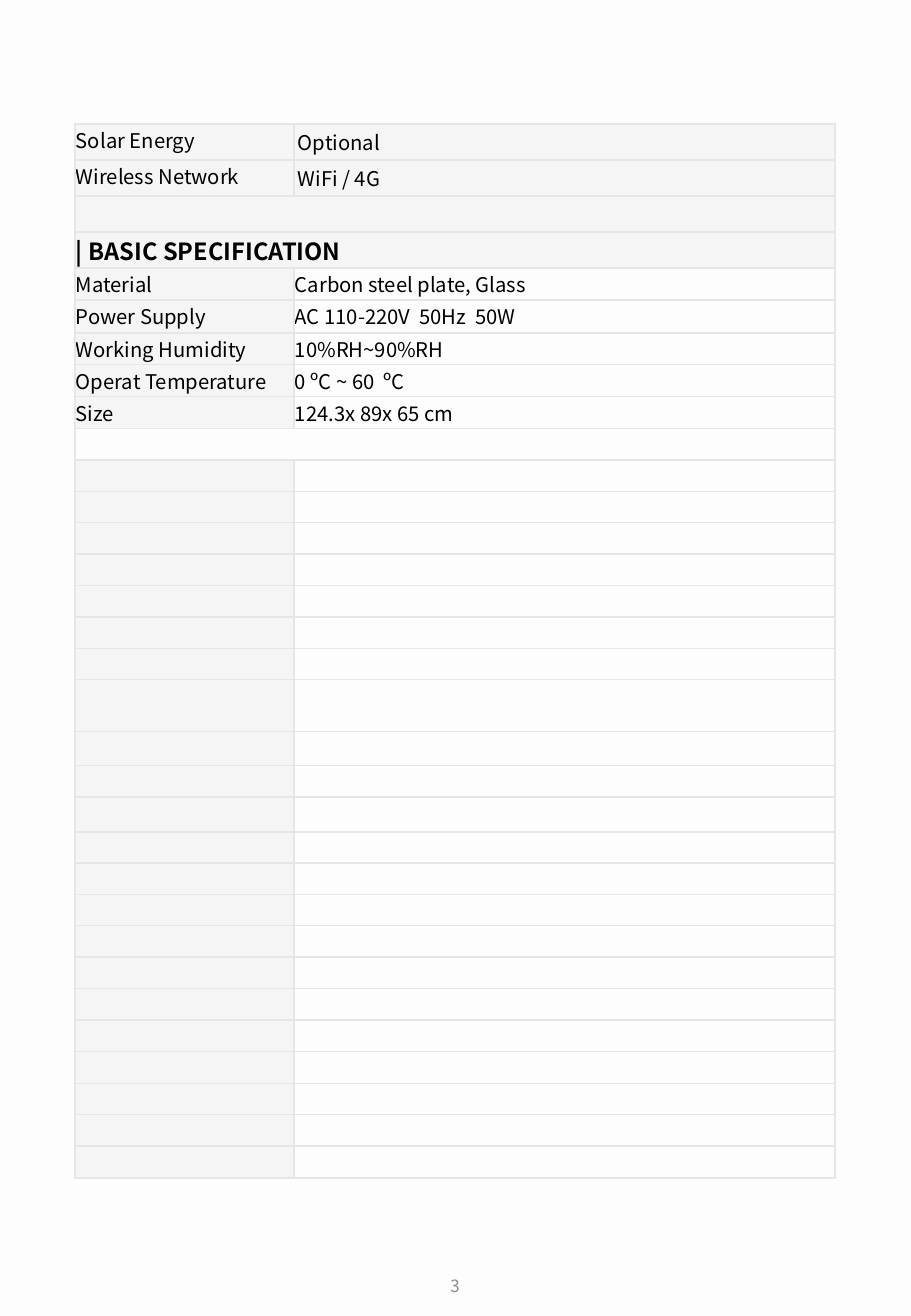
from lxml.etree import SubElement as Sub
from pptx import Presentation
from pptx.dml.color import RGBColor as RGB
from pptx.enum.text import MSO_ANCHOR as Anchor, PP_ALIGN as Align
from pptx.oxml.ns import qn
from pptx.util import Pt

# Content
SPECS = [
    ("Solar Energy", "Optional"),
    ("Wireless Network", "WiFi / 4G"),
    ("", None),
    ("| BASIC SPECIFICATION", None),
    ("Material", "Carbon steel plate, Glass"),
    ("Power Supply", "AC 110-220V  50Hz  50W"),
    ("Working Humidity", "10%RH~90%RH"),
    ("Operat Temperature", "0 ºC ~ 60  ºC"),
    ("Size", "124.3x 89x 65 cm"),
    ("", None),
] + [("", "")] * 22
HEAD, GAP, SHADED = 3, 9, 4
PAGE = "3"

# Style and sizes in px
FONT = "Noto Sans CJK JP"
PAPER = RGB(0xFD, 0xFD, 0xFD)
SHADE = RGB(0xE7, 0xE6, 0xE6)
RULE = RGB(0xE6, 0xE6, 0xE6)
INK = RGB(0, 0, 0)
GREY = RGB(0x8C, 0x8C, 0x8C)
WIDE, TALL = 911, 1316
LEFT, TOP = 75, 124
COLS = [219, 541]
ROWS = ([36] * 4 + [32, 33, 32, 32, 32] + [31] * 4 + [32, 31, 31, 31]
        + [52, 34, 31, 35] + [31] * 5 + [32, 31, 32, 31, 31, 32])
EMU = 914400 / 121.5


def px(n):
    return round(n * EMU)


def write(frame, text, size=12, color=INK, bold=False, align=Align.LEFT):
    para = frame.paragraphs[0]
    para.alignment = align
    if not text:
        Sub(para._p, qn("a:endParaRPr"), sz=str(size * 100))
        return
    run = para.add_run()
    run.text = text
    font = run.font
    font.name, font.size, font.bold = FONT, Pt(size), bold
    font.color.rgb = color
    for tag in ("a:ea", "a:cs"):
        Sub(run._r.rPr, qn(tag), typeface=FONT)


def border(cell):
    props = cell._tc.get_or_add_tcPr()
    for i, side in enumerate(("lnL", "lnR", "lnT", "lnB")):
        line = Sub(props, qn("a:" + side), w=str(Pt(1)))
        Sub(Sub(line, qn("a:solidFill")), qn("a:srgbClr"), val=str(RULE))
        props.insert(i, line)


def shade(cell):
    cell.fill.solid()
    cell.fill.fore_color.rgb = SHADE
    tint = cell._tc.tcPr.find(".//" + qn("a:solidFill") + "/" + qn("a:srgbClr"))
    Sub(tint, qn("a:alpha"), val="34000")


def style(cell, row, col):
    cell.vertical_anchor = Anchor.MIDDLE
    loose = col == 1 and row < HEAD
    cell.margin_left = cell.margin_right = px(4 if loose else 1)
    cell.margin_top = px(1)
    cell.margin_bottom = px(1 if loose else 6)
    if row < SHADED or (col == 0 and row != GAP):
        shade(cell)
    else:
        cell.fill.background()
    border(cell)


deck = Presentation()
deck.slide_width, deck.slide_height = px(WIDE), px(TALL)
slide = deck.slides.add_slide(deck.slide_layouts[6])
slide.background.fill.solid()
slide.background.fill.fore_color.rgb = PAPER

# Page number
box = slide.shapes.add_textbox(px(307), px(1255), px(296), px(61))
box.text_frame.word_wrap = True
box.text_frame.vertical_anchor = Anchor.MIDDLE
write(box.text_frame, PAGE, size=10, color=GREY, align=Align.CENTER)

# Specification table
table = slide.shapes.add_table(len(ROWS), len(COLS), px(LEFT), px(TOP),
                               px(sum(COLS)), px(sum(ROWS))).table
table.first_row = table.horz_banding = False
for col, width in zip(table.columns, COLS):
    col.width = px(width)
for r, (pair, high) in enumerate(zip(SPECS, ROWS)):
    table.rows[r].height = px(high)
    if pair[1] is None:
        table.cell(r, 0).merge(table.cell(r, 1))
    for c, text in enumerate(pair):
        cell = table.cell(r, c)
        style(cell, r, c)
        head = r == HEAD
        write(cell.text_frame, text, size=14 if head else 12, bold=head)

deck.save("out.pptx")
